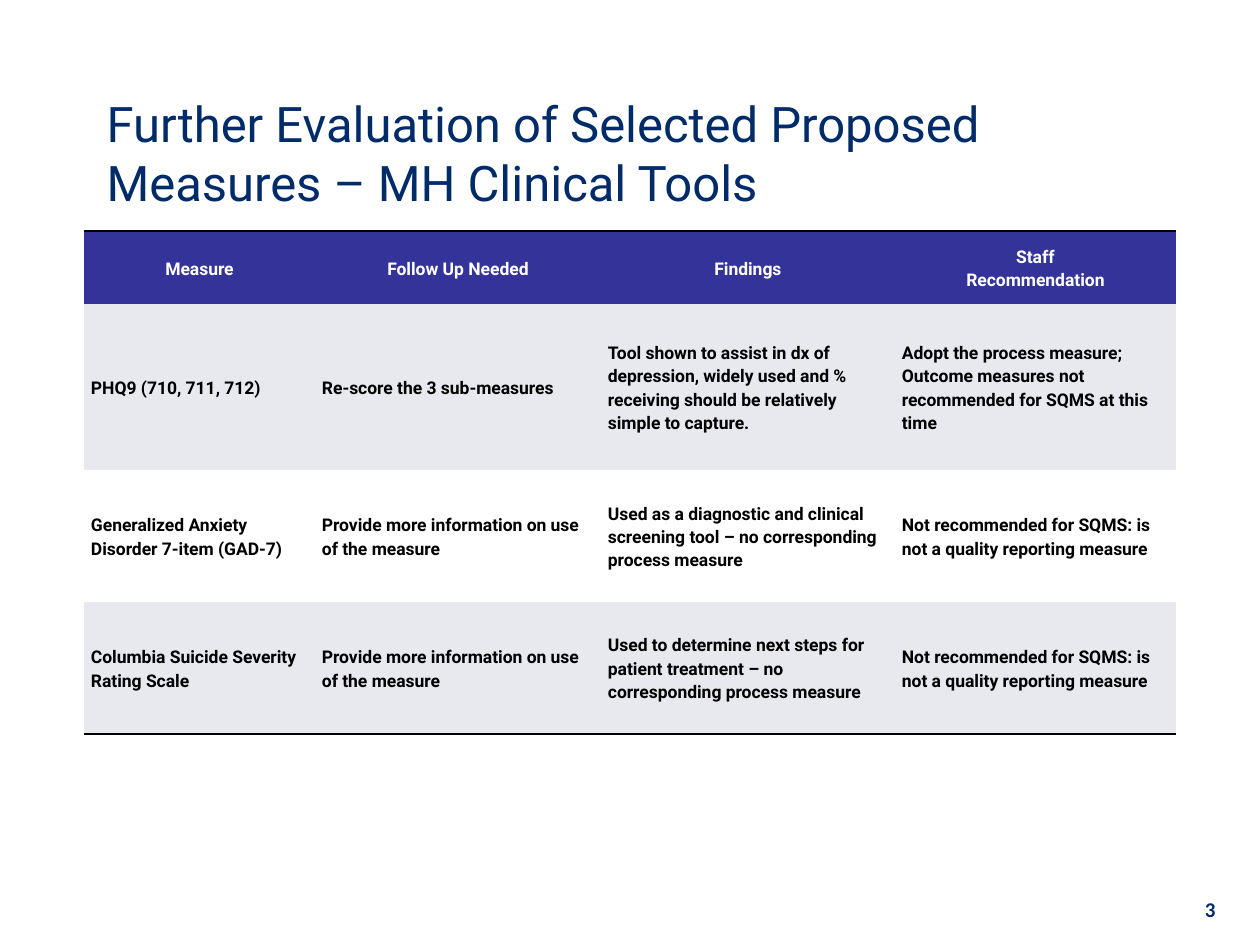
from lxml import etree
from pptx import Presentation
from pptx.dml.color import RGBColor
from pptx.enum.text import MSO_ANCHOR, MSO_AUTO_SIZE, PP_ALIGN
from pptx.oxml.ns import qn
from pptx.util import Inches, Pt

MID = MSO_ANCHOR.MIDDLE
FIXED = MSO_AUTO_SIZE.NONE
LEFT, CENTER, RIGHT = PP_ALIGN.LEFT, PP_ALIGN.CENTER, PP_ALIGN.RIGHT
SCALE = Inches(1) / 126
PLAIN = "{2D5ABB26-0587-4C30-8999-92F81FD0307C}"
NAVY, BLUE, GRAY, WHITE, BLACK = "002B69", "333399", "E8E8EF", "FFFFFF", "000000"

HEAD = ["Measure", "Follow Up Needed", "Findings", "Staff\nRecommendation"]
MORE = "Provide more information on use of the measure"
REJECT = "Not recommended for SQMS: is not a quality reporting measure"
ROWS = [
    ["PHQ9 (710, 711, 712)", "Re-score the 3 sub-measures",
     "Tool shown to assist in dx of depression, widely used and % receiving "
     "should be relatively simple to capture.",
     "Adopt the process measure; Outcome measures not recommended for SQMS at this time"],
    ["Generalized Anxiety Disorder 7-item (GAD-7)", MORE,
     "Used as a diagnostic and clinical screening tool – no corresponding process measure",
     REJECT],
    ["Columbia Suicide Severity Rating Scale", MORE,
     "Used to determine next steps for patient treatment – no corresponding process measure",
     REJECT],
]


def px(n):
    return round(n * SCALE)


def rgb(code):
    return RGBColor.from_string(code)


def apply(item, values):
    for name, value in values.items():
        setattr(item, name, value)


class Deck:
    cell_pad = {"margin_left": px(7), "margin_right": px(7), "margin_top": 0,
                "margin_bottom": 0, "vertical_anchor": MID}
    frame = {"word_wrap": True, "auto_size": FIXED, "vertical_anchor": MID}
    cell_font = {"name": "Roboto", "size": Pt(10), "bold": True}

    def __init__(self):
        self.prs = Presentation()
        apply(self.prs, {"slide_width": px(1260), "slide_height": px(945)})
        self.slide = self.prs.slides.add_slide(self.prs.slide_layouts[5])

    def label(self, frame, text, font, color, para):
        frame.text = text
        for line in frame.paragraphs:
            apply(line, para)
            apply(line.font, font)
            line.font.color.rgb = rgb(color)

    def title(self, text, x, y, w, h):
        shape = self.slide.shapes.title
        apply(shape, {"left": px(x), "top": px(y), "width": px(w), "height": px(h)})
        apply(shape.text_frame, self.frame)
        self.label(shape.text_frame, text, {"name": "Roboto", "size": Pt(28)},
                   NAVY, {"alignment": LEFT})

    def number(self, text, x, y, w, h):
        box = self.slide.shapes.add_textbox(px(x), px(y), px(w), px(h))
        apply(box.text_frame, self.frame)
        self.label(box.text_frame, text,
                   {"name": "Calibri", "size": Pt(12), "bold": True},
                   NAVY, {"alignment": RIGHT})

    def border(self, cell, side):
        line = etree.Element(qn(f"a:{side}"), w=str(Pt(1)))
        fill = etree.SubElement(line, qn("a:solidFill"))
        etree.SubElement(fill, qn("a:srgbClr"), val=BLACK)
        cell._tc.get_or_add_tcPr().insert(0, line)

    def cell(self, cell, text, fill, color, para):
        apply(cell, self.cell_pad)
        cell.fill.solid()
        cell.fill.fore_color.rgb = rgb(fill)
        self.label(cell.text_frame, text, self.cell_font, color,
                   {"line_spacing": 1.15, **para})

    def table(self, x, y, cols, rows, data):
        shape = self.slide.shapes.add_table(
            len(rows), len(cols), px(x), px(y), px(sum(cols)), px(sum(rows)))
        table = shape.table
        table._tbl.tblPr.find(qn("a:tableStyleId")).text = PLAIN
        table.horz_banding = False
        for col, w in zip(table.columns, cols):
            col.width = px(w)
        for r, (h, texts) in enumerate(zip(rows, data)):
            table.rows[r].height = px(h)
            for c, text in enumerate(texts):
                cell = table.cell(r, c)
                if r == 0:
                    self.cell(cell, text, BLUE, WHITE, {"alignment": CENTER})
                    self.border(cell, "lnT")
                else:
                    self.cell(cell, text, GRAY if r % 2 else WHITE, BLACK,
                              {"alignment": LEFT, "space_after": Pt(10)})
                if r == len(rows) - 1:
                    self.border(cell, "lnB")


def main():
    deck = Deck()
    deck.number("3", 966, 892, 262, 34)
    deck.title("Further Evaluation of Selected Proposed Measures – MH Clinical Tools",
               94, 84, 1071, 136)
    deck.table(84, 231, [231, 286, 294, 281], [73, 166, 132, 132], [HEAD, *ROWS])
    deck.prs.save("out.pptx")


if __name__ == "__main__":
    main()
